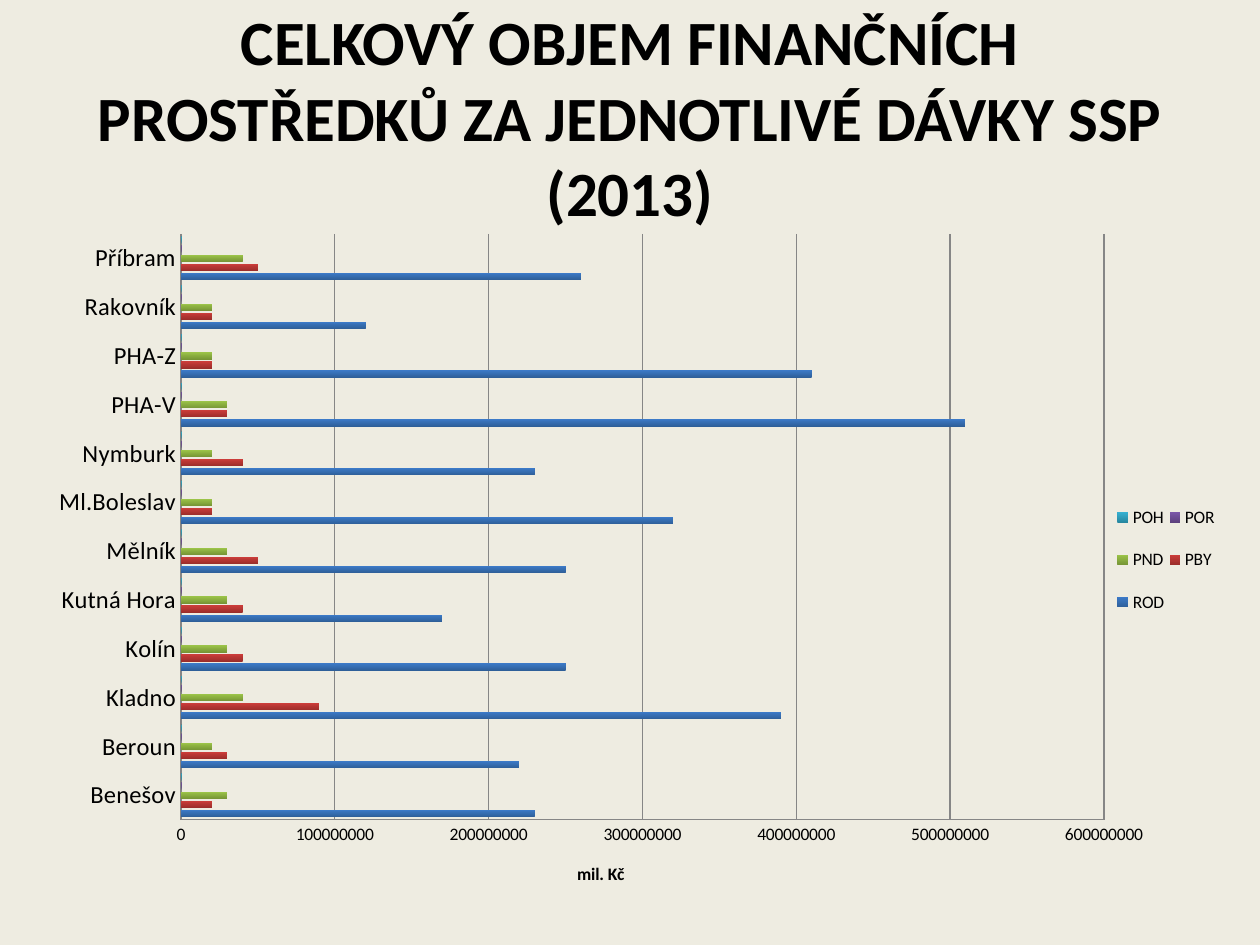
import dataclasses

import pptx
import pptx.chart.data
import pptx.dml.color
import pptx.enum.chart
import pptx.enum.text
import pptx.oxml
import pptx.oxml.ns
import pptx.util

EMU_PER_PX = 914400 // 126
MILLION = 1_000_000
CHART_LEFT, CHART_TOP, CHART_WIDTH, CHART_HEIGHT = 35, 220, 1201, 688


@dataclasses.dataclass(frozen=True)
class Theme:
    background: str = "EEECE1"
    text: str = "000000"
    grid: str = "868686"
    font: str = "Calibri"
    title_size: int = 36
    category_size: int = 14
    chart_size: int = 10


THEME = Theme()
TITLE = "CELKOVÝ OBJEM FINANČNÍCH PROSTŘEDKŮ ZA JEDNOTLIVÉ DÁVKY SSP (2013)"
DISTRICTS = [
    "Benešov", "Beroun", "Kladno", "Kolín", "Kutná Hora", "Mělník",
    "Ml.Boleslav", "Nymburk", "PHA-V", "PHA-Z", "Rakovník", "Příbram",
]
# Benefit name, dark and light bar colour, millions of Kč by district
BENEFITS = [
    ("ROD", "2E5F99", "3C7AC7", [230, 220, 390, 250, 170, 250, 320, 230, 510, 410, 120, 260]),
    ("PBY", "9B2D2A", "CB3D3A", [20, 30, 90, 40, 40, 50, 20, 40, 30, 20, 20, 50]),
    ("PND", "769535", "9BC348", [30, 20, 40, 30, 30, 30, 20, 20, 30, 20, 20, 40]),
    ("POR", "5D417E", "7B57A8", [0] * len(DISTRICTS)),
    ("POH", "2787A0", "36B1D2", [0] * len(DISTRICTS)),
]


def px(length):
    return pptx.util.Emu(length * EMU_PER_PX)


def rgb(value):
    return pptx.dml.color.RGBColor.from_string(value)


def style_font(font, size, bold=False):
    font.name = THEME.font
    font.size = pptx.util.Pt(size)
    font.bold = bold
    font.color.rgb = rgb(THEME.text)


def set_layout(element, left, top, size=None, previous_tag=None, target=None):
    """Place a chart part by slide px, after its previous_tag child."""
    values = {"layoutTarget": target} if target else {}
    values |= {
        "xMode": "edge",
        "yMode": "edge",
        "x": (left - CHART_LEFT) / CHART_WIDTH,
        "y": (top - CHART_TOP) / CHART_HEIGHT,
    }
    if size:
        values |= {"w": size[0] / CHART_WIDTH, "h": size[1] / CHART_HEIGHT}
    for layout in element.findall(pptx.oxml.ns.qn("c:layout")):
        element.remove(layout)
    settings = "".join(f'<c:{name} val="{value}"/>' for name, value in values.items())
    layout = pptx.oxml.parse_xml(
        f'<c:layout {pptx.oxml.ns.nsdecls("c")}>'
        f"<c:manualLayout>{settings}</c:manualLayout></c:layout>"
    )
    if previous_tag:
        element.find(pptx.oxml.ns.qn(previous_tag)).addnext(layout)
    else:
        element.insert(0, layout)


def add_title(slide):
    box = slide.shapes.add_textbox(px(63), px(37), px(1134), px(158))
    frame = box.text_frame
    frame.word_wrap = True
    frame.vertical_anchor = pptx.enum.text.MSO_ANCHOR.MIDDLE
    paragraph = frame.paragraphs[0]
    paragraph.text = TITLE
    paragraph.alignment = pptx.enum.text.PP_ALIGN.CENTER
    style_font(paragraph.font, THEME.title_size, bold=True)


def style_axes(chart):
    for axis, size in (
        (chart.category_axis, THEME.category_size),
        (chart.value_axis, THEME.chart_size),
    ):
        axis.major_tick_mark = pptx.enum.chart.XL_TICK_MARK.NONE
        axis.minor_tick_mark = pptx.enum.chart.XL_TICK_MARK.NONE
        axis.format.line.color.rgb = rgb(THEME.grid)
        style_font(axis.tick_labels.font, size)

    value_axis = chart.value_axis
    value_axis.minimum_scale = 0
    value_axis.maximum_scale = 600 * MILLION
    value_axis.major_unit = 100 * MILLION
    value_axis.has_major_gridlines = True
    value_axis.major_gridlines.format.line.color.rgb = rgb(THEME.grid)

    title = value_axis.axis_title
    paragraph = title.text_frame.paragraphs[0]
    paragraph.text = "mil. Kč"
    style_font(paragraph.font, THEME.chart_size, bold=True)
    set_layout(title._element, 574, 859, previous_tag="c:tx")


def style_bars(plot):
    plot.gap_width = 75
    plot.overlap = -25
    plot.vary_by_categories = False
    for series, (_, dark, light, _) in zip(plot.series, BENEFITS):
        fill = series.format.fill
        fill.gradient()
        fill.gradient_angle = 90
        for stop, color in zip(fill.gradient_stops, (dark, light)):
            stop.color.rgb = rgb(color)


def add_legend(chart):
    chart.has_legend = True
    legend = chart.legend
    legend.position = pptx.enum.chart.XL_LEGEND_POSITION.RIGHT
    legend.include_in_layout = False
    style_font(legend.font, THEME.chart_size)
    set_layout(legend._element, 1112, 485, size=(108, 150), previous_tag="c:legendPos")


def add_benefit_chart(slide):
    data = pptx.chart.data.CategoryChartData()
    data.categories = DISTRICTS
    for name, _, _, millions in BENEFITS:
        data.add_series(name, [value * MILLION for value in millions])
    chart = slide.shapes.add_chart(
        pptx.enum.chart.XL_CHART_TYPE.BAR_CLUSTERED,
        px(CHART_LEFT), px(CHART_TOP), px(CHART_WIDTH), px(CHART_HEIGHT), data,
    ).chart
    chart.has_title = False
    style_font(chart.font, THEME.chart_size)
    style_axes(chart)
    style_bars(chart.plots[0])
    add_legend(chart)
    plot_area = chart._chartSpace.chart.plotArea
    set_layout(plot_area, 181, 234, size=(923, 586), target="inner")


def main():
    presentation = pptx.Presentation()
    presentation.slide_width = px(1260)
    presentation.slide_height = px(945)
    slide = presentation.slides.add_slide(presentation.slide_layouts[6])
    slide.background.fill.solid()
    slide.background.fill.fore_color.rgb = rgb(THEME.background)
    add_title(slide)
    add_benefit_chart(slide)
    presentation.save("out.pptx")


if __name__ == "__main__":
    main()
